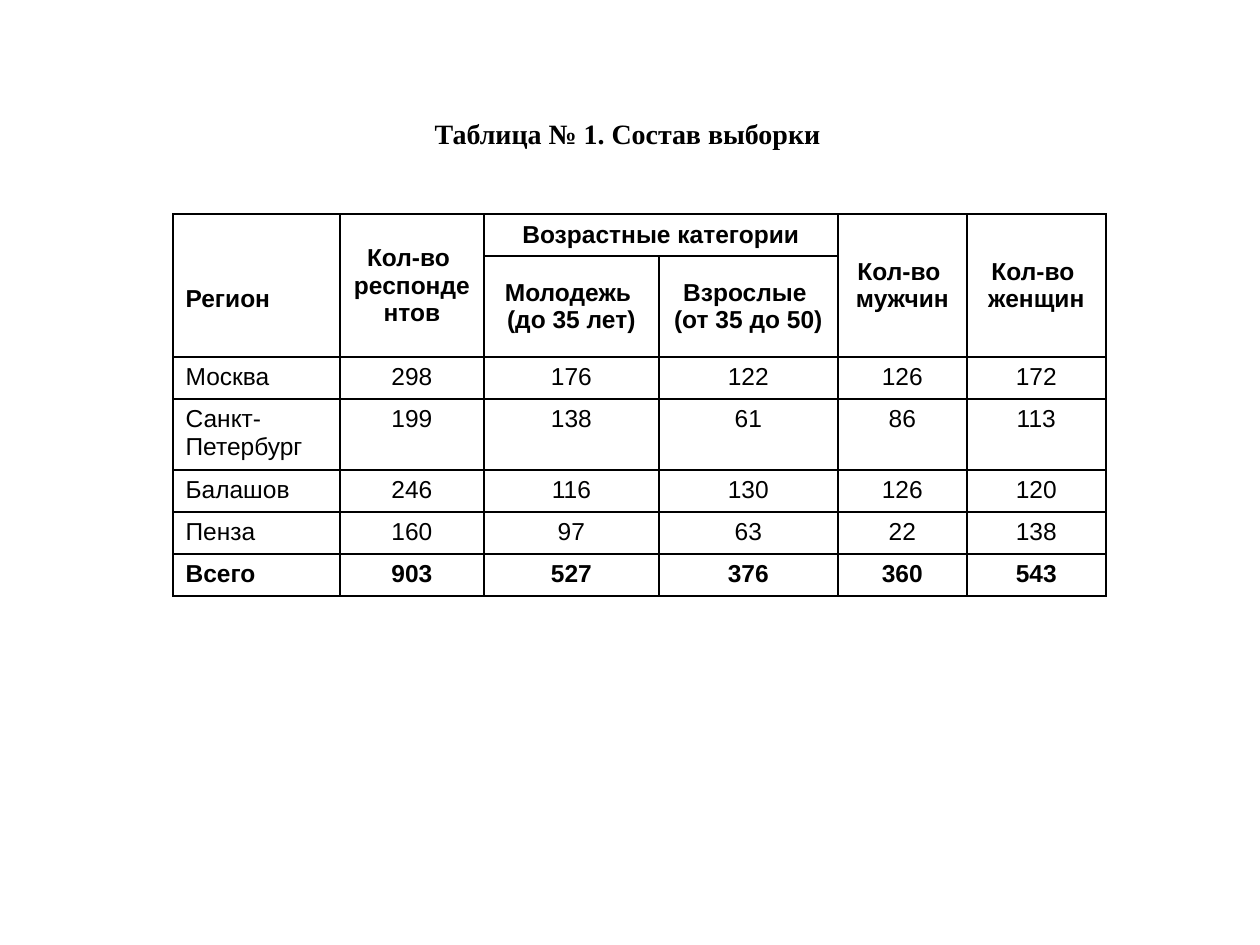
from lxml.etree import SubElement
from pptx import Presentation
from pptx.dml.color import RGBColor
from pptx.enum.text import MSO_ANCHOR as Anchor, MSO_AUTO_SIZE as Fit, PP_ALIGN as Align
from pptx.oxml.ns import qn
from pptx.util import Pt

SCALE = 914400 / 126
BLACK, WHITE = "000000", "FFFFFF"

TITLE = "Таблица № 1. Состав выборки"
COLS = [167, 144, 175, 179, 129, 139]
ROWS = [42, 101, 42, 71, 42, 42, 42]
HEAD = [
    ["Регион", "Кол-во \nреспондентов", "Возрастные категории", "",
     "Кол-во \nмужчин", "Кол-во \nженщин"],
    ["", "", "Молодежь \n(до 35 лет)", "Взрослые \n(от 35 до 50)", "", ""],
]
DATA = [
    ["Москва", 298, 176, 122, 126, 172],
    ["Санкт-Петербург", 199, 138, 61, 86, 113],
    ["Балашов", 246, 116, 130, 126, 120],
    ["Пенза", 160, 97, 63, 22, 138],
    ["Всего", 903, 527, 376, 360, 543],
]


def px(n):
    return round(n * SCALE)


def rgb(code):
    return RGBColor.from_string(code)


def style(par, face, size, bold, align):
    par.alignment = align
    font = par.font
    font.name, font.size, font.bold = face, Pt(size), bold
    font.color.rgb = rgb(BLACK)


def frame(cell):
    """Draw a thin line on each side of a cell."""
    props = cell._tc.get_or_add_tcPr()
    for side in ("lnL", "lnR", "lnT", "lnB"):
        line = SubElement(props, qn(f"a:{side}"), w=str(Pt(1)))
        fill = SubElement(line, qn("a:solidFill"))
        SubElement(fill, qn("a:srgbClr"), val=BLACK)


def add_title(slide, left, top, width, height):
    title = slide.shapes.title
    title.left, title.top = px(left), px(top)
    title.width, title.height = px(width), px(height)
    text = title.text_frame
    text.text = TITLE
    text.word_wrap = False
    text.auto_size = Fit.NONE
    text.vertical_anchor = Anchor.MIDDLE
    style(text.paragraphs[0], "Times New Roman", 16, True, Align.CENTER)


def add_grid(slide, left, top):
    lines = HEAD + DATA
    shape = slide.shapes.add_table(len(ROWS), len(COLS), px(left), px(top),
                                   px(sum(COLS)), px(sum(ROWS)))
    table = shape.table
    table.first_row = table.horz_banding = False
    for col, width in zip(table.columns, COLS):
        col.width = px(width)
    for row, height in zip(table.rows, ROWS):
        row.height = px(height)

    # Cells
    for r, line in enumerate(lines):
        head = r < len(HEAD)
        bold = head or r == len(lines) - 1
        for c, value in enumerate(line):
            cell = table.cell(r, c)
            cell.text = str(value)
            cell.vertical_anchor = Anchor.MIDDLE if head else Anchor.TOP
            frame(cell)
            cell.fill.solid()
            cell.fill.fore_color.rgb = rgb(WHITE)
            side = Align.LEFT if head else Align.JUSTIFY
            for par in cell.text_frame.paragraphs:
                style(par, "Arial", 14, bold, Align.CENTER if c else side)

    # Header spans
    for c in (0, 1, 4, 5):
        table.cell(0, c).merge(table.cell(1, c))
    table.cell(0, 2).merge(table.cell(0, 3))
    table.cell(0, 0).margin_top = px(34)


def main():
    deck = Presentation()
    deck.slide_width, deck.slide_height = px(1260), px(945)
    slide = deck.slides.add_slide(deck.slide_layouts[5])
    add_title(slide, 421, 110, 413, 47)
    add_grid(slide, 173, 214)
    deck.save("out.pptx")


if __name__ == "__main__":
    main()
